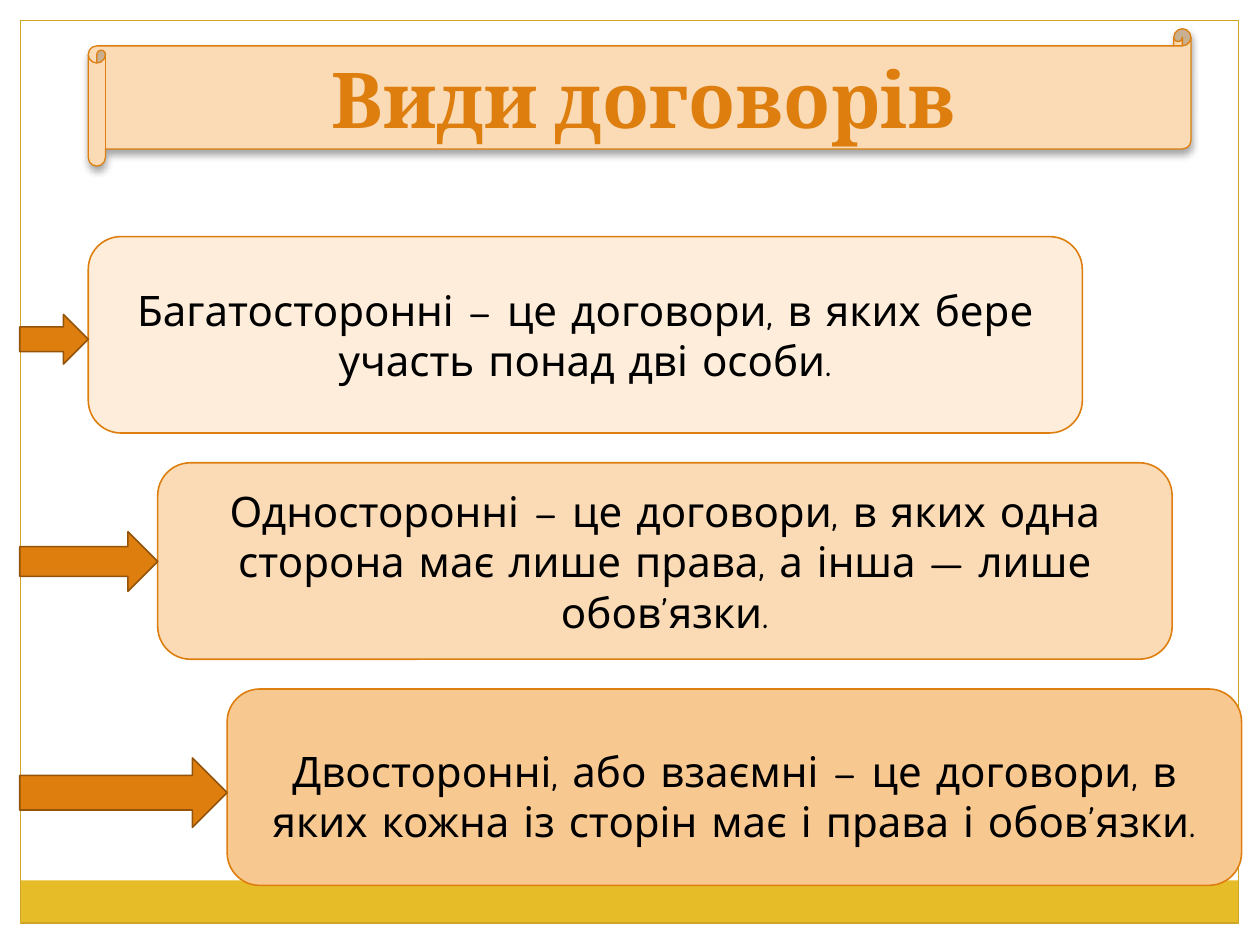
from lxml import etree
from pptx import Presentation
from pptx.dml.color import RGBColor
from pptx.enum.shapes import MSO_SHAPE
from pptx.enum.text import MSO_ANCHOR, PP_ALIGN
from pptx.oxml.ns import qn
from pptx.util import Cm, Pt

RECTANGLE, ROUNDED = MSO_SHAPE.RECTANGLE, MSO_SHAPE.ROUNDED_RECTANGLE
SCROLL, ARROW = MSO_SHAPE.HORIZONTAL_SCROLL, MSO_SHAPE.RIGHT_ARROW
MIDDLE, CENTER = MSO_ANCHOR.MIDDLE, PP_ALIGN.CENTER

# Content
TITLE = "Види договорів"
# text, fill key, box width, top inset, arrow height, arrow drop from box middle
CONTRACTS = [
    ("Багатосторонні – це договори, в яких бере участь понад дві особи.",
     "pale", 20.04, 0.13, 1.0, 0.09),
    ("Односторонні – це договори, в яких одна сторона має лише права, "
     "а інша — лише обов’язки.",
     "light", 20.45, 0.13, 1.2, 0.01),
    ("Двосторонні, або взаємні – це договори, в яких кожна із сторін має "
     "і права і обов’язки.",
     "medium", 20.45, 0.46, 1.4, 0.11),
]

THEME = {
    "band": "E7BC29", "frame": "CCA624", "accent": "DD7E0E",
    "arrow_edge": "93540A", "text": "000000",
    "pale": "FDEDDA", "light": "FADBB5", "medium": "F8C891",
    "title_font": "Cambria", "title_size": 44,
    "body_font": "Comic Neue", "body_size": 24,
}

# Layout in centimetres
FRAME_EDGE, FRAME_WIDTH, FRAME_HEIGHT = 0.42, 24.55, 18.19
BAND_HEIGHT = 0.86
SCROLL_BOX = (1.78, 0.58, 22.23, 2.77)
BOX_LEFT, BOX_TOP, BOX_HEIGHT = 1.78, 4.77, 3.96
BOX_STEP_X, BOX_STEP_Y = 1.4, 4.56
ARROW_LEFT = 0.4


def color(key):
    return RGBColor.from_string(THEME[key])


def add_shape(slide, preset, box, fill=None, line=None, line_width=0.9):
    shape = slide.shapes.add_shape(preset, *(Cm(value) for value in box))
    shape.shadow.inherit = False
    if fill:
        shape.fill.solid()
        shape.fill.fore_color.rgb = color(fill)
    else:
        shape.fill.background()
    if line:
        shape.line.color.rgb = color(line)
        shape.line.width = Pt(line_width)
    else:
        shape.line.fill.background()
    return shape


def write(shape, text, style, text_color, bold=False):
    frame = shape.text_frame
    frame.word_wrap = True
    frame.vertical_anchor = MIDDLE
    paragraph = frame.paragraphs[0]
    paragraph.alignment = CENTER
    run = paragraph.add_run()
    run.text = text
    run.font.name = THEME[style + "_font"]
    run.font.size = Pt(THEME[style + "_size"])
    run.font.bold = bold
    run.font.color.rgb = color(text_color)


def add_soft_shadow(shape):
    effects = shape._element.spPr.find(qn("a:effectLst"))
    shadow = etree.SubElement(
        effects, qn("a:outerShdw"), blurRad=str(Pt(4)), dist=str(Pt(2)),
        dir="5400000", rotWithShape="0")
    tint = etree.SubElement(shadow, qn("a:srgbClr"), val="000000")
    etree.SubElement(tint, qn("a:alpha"), val="35000")


def add_frame(slide):
    band_top = FRAME_EDGE + FRAME_HEIGHT - BAND_HEIGHT
    add_shape(slide, RECTANGLE,
              (FRAME_EDGE, band_top, FRAME_WIDTH, BAND_HEIGHT), "band")
    add_shape(slide, RECTANGLE,
              (FRAME_EDGE, FRAME_EDGE, FRAME_WIDTH, FRAME_HEIGHT),
              line="frame", line_width=0.75)


def add_title(slide):
    scroll = add_shape(slide, SCROLL, SCROLL_BOX, "light", "accent", 0.75)
    add_soft_shadow(scroll)
    left, top, width, height = SCROLL_BOX
    roll = height / 8
    title = slide.shapes.title
    title.left, title.top = Cm(left + roll), Cm(top + roll)
    title.width, title.height = Cm(width - 1.5 * roll), Cm(height - 2 * roll)
    write(title, TITLE, "title", "accent", bold=True)
    # Bring the title in front of its scroll
    slide.shapes._spTree.append(title._element)


def add_contracts(slide):
    for row, (text, fill, width, inset, arrow_height, drop) in enumerate(CONTRACTS):
        left = BOX_LEFT + row * BOX_STEP_X
        top = BOX_TOP + row * BOX_STEP_Y
        box = add_shape(slide, ROUNDED, (left, top, width, BOX_HEIGHT),
                        fill, "accent")
        box.text_frame.margin_top = Cm(inset)
        write(box, text, "body", "text")

        arrow_top = top + (BOX_HEIGHT - arrow_height) / 2 + drop
        add_shape(slide, ARROW,
                  (ARROW_LEFT, arrow_top, left - ARROW_LEFT, arrow_height),
                  "accent", "arrow_edge")


def main():
    deck = Presentation()
    deck.slide_width, deck.slide_height = Cm(25.4), Cm(19.05)
    slide = deck.slides.add_slide(deck.slide_layouts[5])
    add_frame(slide)
    add_title(slide)
    add_contracts(slide)
    deck.save("out.pptx")


if __name__ == "__main__":
    main()
